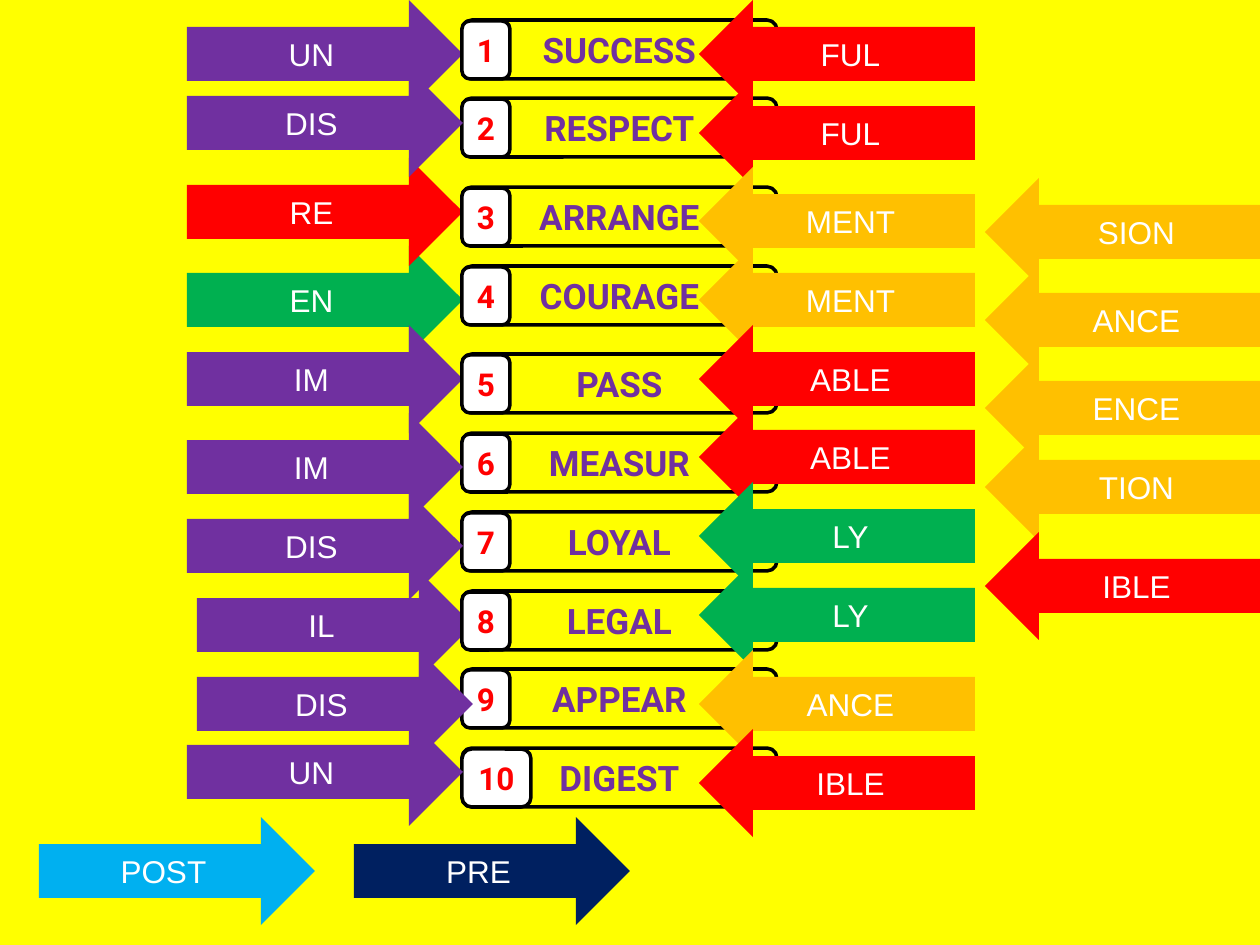
"""Build a word-building slide of prefix, root and suffix pieces."""
import pptx
import pptx.util
import pptx.dml.color
import pptx.enum.shapes
import pptx.enum.text

KIND = pptx.enum.shapes.MSO_SHAPE
SCALE = 914400 / 126
HUES = {
    "yellow": "FFFF00", "gold": "FFC000", "red": "FF0000", "green": "00B050",
    "purple": "7030A0", "sky": "00B0F0", "navy": "002060",
    "white": "FFFFFF", "black": "000000",
}
LABEL = {"name": "Arial", "size": pptx.util.Pt(18), "bold": False}
ROOT = {"name": "Roboto", "size": pptx.util.Pt(20), "bold": True}
BADGE = {"name": "Roboto", "size": pptx.util.Pt(18), "bold": True}

OUTER = [
    ("ENCE", 985, 354, "gold"), ("TION", 985, 433, "gold"),
    ("SION", 985, 178, "gold"), ("ANCE", 985, 266, "gold"),
    ("IBLE", 985, 532, "red"),
]
UNDER = [
    ("UN", 187, 0, "purple"), ("EN", 187, 246, "green"),
    ("RE", 187, 158, "red"), ("IM", 187, 325, "purple"),
    ("PRE", 354, 817, "navy"), ("POST", 39, 817, "sky"),
    ("IL", 197, 571, "purple"),
]
ROOTS = [
    ("SUCCESS", 20), ("RESPECT", 98), ("ARRANGE", 187), ("COURAGE", 266),
    ("PASS", 354), ("MEASUR", 433), ("LOYAL", 512), ("LEGAL", 591),
    ("APPEAR", 669), ("DIGEST", 748),
]
OVER = [
    ("DIS", 187, 69, "purple"), ("IM", 187, 413, "purple"),
    ("DIS", 187, 492, "purple"), ("DIS", 197, 650, "purple"),
    ("UN", 187, 718, "purple"),
]
ENDS = [
    ("FUL", 699, 0, "red"), ("FUL", 699, 79, "red"),
    ("MENT", 699, 167, "gold"), ("MENT", 699, 246, "gold"),
    ("ABLE", 699, 325, "red"), ("ABLE", 699, 403, "red"),
    ("LY", 699, 482, "green"), ("LY", 699, 561, "green"),
    ("ANCE", 699, 650, "gold"), ("IBLE", 699, 729, "red"),
]


def px(num):
    """Turn px into EMU."""
    return pptx.util.Emu(round(num * SCALE))


def tint(name):
    """Give the colour held under a name."""
    return pptx.dml.color.RGBColor.from_string(HUES[name])


def piece(slide, kind, box, fill, text, ink, style):
    """Add a filled shape with centred text and no outline."""
    shape = slide.shapes.add_shape(kind, *map(px, box))
    shape.shadow.inherit = False
    shape.fill.solid()
    shape.fill.fore_color.rgb = tint(fill)
    shape.line.fill.background()
    frame = shape.text_frame
    frame.vertical_anchor = pptx.enum.text.MSO_ANCHOR.MIDDLE
    para = frame.paragraphs[0]
    para.alignment = pptx.enum.text.PP_ALIGN.CENTER
    run = para.add_run()
    run.text = text
    for key, value in style.items():
        setattr(run.font, key, value)
    run.font.color.rgb = tint(ink)
    return shape


def arrows(slide, kind, rows):
    """Add a set of labelled arrows."""
    for text, left, top, fill in rows:
        piece(slide, kind, (left, top, 276, 108), fill, text, "white", LABEL)


def card(slide, box, fill, text, ink, style):
    """Add a rounded card with a black outline."""
    shape = piece(slide, KIND.ROUNDED_RECTANGLE, box, fill, text, ink, style)
    shape.line.color.rgb = tint("black")
    shape.line.width = pptx.util.Pt(2)


def main():
    """Build and save the slide."""
    deck = pptx.Presentation()
    deck.slide_width, deck.slide_height = px(1260), px(945)
    slide = deck.slides.add_slide(deck.slide_layouts[6])
    back = slide.background.fill
    back.solid()
    back.fore_color.rgb = tint("yellow")

    arrows(slide, KIND.LEFT_ARROW, OUTER)
    arrows(slide, KIND.RIGHT_ARROW, UNDER)
    for text, top in ROOTS:
        card(slide, (462, top, 315, 59), "yellow", text, "purple", ROOT)
    for num, (_, top) in enumerate(ROOTS, 1):
        wide = 48 if num < 10 else 69
        card(slide, (462, top + 1, wide, 58), "white", str(num), "red", BADGE)
    arrows(slide, KIND.RIGHT_ARROW, OVER)
    arrows(slide, KIND.LEFT_ARROW, ENDS)
    deck.save("out.pptx")


if __name__ == "__main__":
    main()
